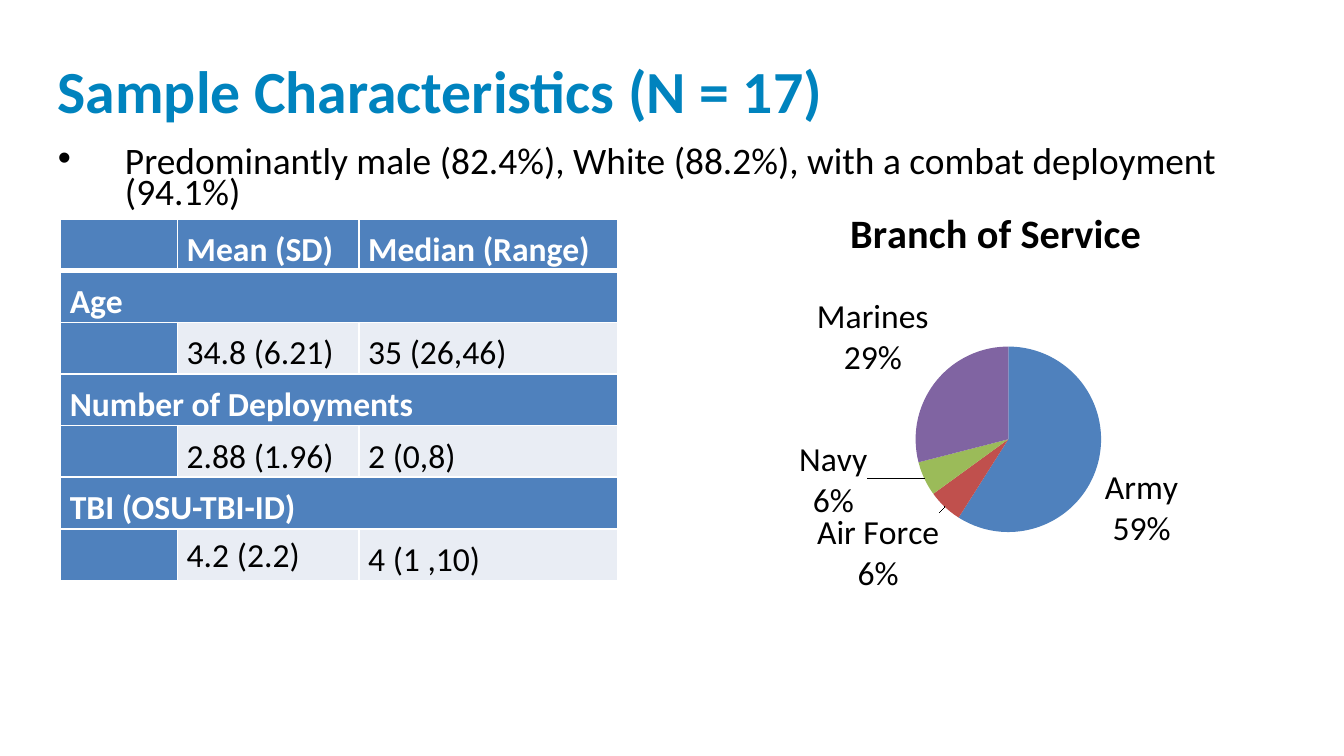
from lxml import etree
from pptx import Presentation
from pptx.chart.data import CategoryChartData
from pptx.dml.color import RGBColor
from pptx.enum.chart import XL_CHART_TYPE, XL_LABEL_POSITION
from pptx.enum.text import MSO_ANCHOR, MSO_AUTO_SIZE, PP_ALIGN
from pptx.oxml import parse_xml
from pptx.oxml.ns import nsdecls, qn
from pptx.util import Inches, Pt

FONT = "Calibri"
TEAL = RGBColor(0x00, 0x83, 0xBE)
BLACK = RGBColor(0, 0, 0)
WHITE = RGBColor(0xFF, 0xFF, 0xFF)
BLUE = RGBColor(0x4F, 0x81, 0xBD)
PALE = RGBColor(0xE9, 0xED, 0xF4)
RED = RGBColor(0xC0, 0x50, 0x4D)
GREEN = RGBColor(0x9B, 0xBB, 0x59)
PURPLE = RGBColor(0x80, 0x64, 0xA2)

ROWS = [
    ("", "Mean (SD)", "Median (Range)"),
    ("Age",),
    ("", "34.8 (6.21)", "35 (26,46)"),
    ("Number of Deployments",),
    ("", "2.88 (1.96)", "2 (0,8)"),
    ("TBI (OSU-TBI-ID)",),
    ("", "4.2 (2.2)", "4 (1 ,10)"),
]
BRANCHES = [("Army", 59, BLUE), ("Air Force", 6, RED),
            ("Navy", 6, GREEN), ("Marines", 29, PURPLE)]
# Label shift and size, as shares of the chart
LABELS = {1: (0, 0, 0.13, 0.26), 2: (-0.08, -0.09, 0.13, 0.18)}
C15 = "http://schemas.microsoft.com/office/drawing/2012/chart"


def style(font, size, color=BLACK, bold=False):
    font.name, font.size, font.bold = FONT, Pt(size), bold
    font.color.rgb = color


def write(frame, text, size=18, color=BLACK, bold=False, gap=1.0,
          anchor=MSO_ANCHOR.TOP, bullet=False):
    frame.vertical_anchor = anchor
    para = frame.paragraphs[0]
    para.text = text
    para.alignment = PP_ALIGN.LEFT
    para.line_spacing = gap
    para.space_before = Pt(0)
    if bullet:
        props = para._p.get_or_add_pPr()
        props.set("marL", str(Inches(0.5)))
        props.set("indent", str(-Inches(0.5)))
        etree.SubElement(props, qn("a:buChar")).set("char", "•")
    style(para.font, size, color, bold)
    for run in para.runs:
        style(run.font, size, color, bold)


def place(shape, left, top, width, height):
    shape.left, shape.top = Inches(left), Inches(top)
    shape.width, shape.height = Inches(width), Inches(height)
    shape.text_frame.word_wrap = True
    shape.text_frame.auto_size = MSO_AUTO_SIZE.NONE


def edge(cell, side, width):
    cell._tc.get_or_add_tcPr().append(parse_xml(
        f'<a:ln{side} {nsdecls("a")} w="{Pt(width)}"><a:solidFill>'
        f'<a:srgbClr val="{WHITE}"/></a:solidFill></a:ln{side}>'))


def fill_cell(cell, text, row, dark, anchor):
    for side in "LRTB":
        thick = (row, side) in ((0, "B"), (1, "T"))
        edge(cell, side, 3 if thick else 1)
    cell.fill.solid()
    cell.fill.fore_color.rgb = BLUE if dark else PALE
    cell.margin_left = cell.margin_right = Inches(0.07)
    cell.margin_top = cell.margin_bottom = 0
    write(cell.text_frame, text, color=WHITE if dark else BLACK,
          bold=dark, gap=1.15)
    cell.vertical_anchor = anchor


def add_stats(slide):
    widths = (0.87, 1.35, 1.93)
    table = slide.shapes.add_table(
        len(ROWS), len(widths), Inches(0.45), Inches(1.63),
        Inches(sum(widths)), Inches(2.69)).table
    for col, width in zip(table.columns, widths):
        col.width = Inches(width)
    for r, texts in enumerate(ROWS):
        group = len(texts) == 1
        for c in range(len(widths)):
            text = texts[c] if c < len(texts) else ""
            top = (r, c) == (len(ROWS) - 1, 1)
            fill_cell(table.cell(r, c), text, r, group or r == 0 or c == 0,
                      MSO_ANCHOR.TOP if top else MSO_ANCHOR.BOTTOM)
        if group:
            table.cell(r, 0).merge(table.cell(r, len(widths) - 1))


def layout(x, y, extra=""):
    return parse_xml(
        f'<c:layout {nsdecls("c")}><c:manualLayout>{extra}'
        f'<c:x val="{x}"/><c:y val="{y}"/></c:manualLayout></c:layout>')


def break_lines(labels):
    mark = etree.Element(qn("c:separator"))
    mark.text = "\n"
    last = labels.find(qn("c:showBubbleSize"))
    if last is None:
        last = labels.find(qn("c:showPercent"))
    last.addnext(mark)


def move_label(point, x, y, width, height):
    label = point.data_label
    style(label.font, 18)
    label.position = XL_LABEL_POSITION.OUTSIDE_END
    node = label._dLbl
    for flag, on in (("showVal", 0), ("showCatName", 1), ("showPercent", 1)):
        node.find(qn(f"c:{flag}")).set("val", str(on))
    node.find(qn("c:idx")).addnext(layout(x, y))
    break_lines(node)
    node.append(parse_xml(
        f'<c:extLst {nsdecls("c")}>'
        f'<c:ext uri="{{CE6537A1-D6FC-4f65-9D91-7224C49458BB}}" '
        f'xmlns:c15="{C15}"><c15:layout><c:manualLayout>'
        f'<c:w val="{width}"/><c:h val="{height}"/>'
        f'</c:manualLayout></c15:layout></c:ext></c:extLst>'))


def add_pie(slide):
    data = CategoryChartData()
    data.categories = [name for name, _, _ in BRANCHES]
    data.add_series("Series 1", [value for _, value, _ in BRANCHES])
    chart = slide.shapes.add_chart(
        XL_CHART_TYPE.PIE, Inches(5.09), Inches(1.34),
        Inches(4.64), Inches(3.54), data).chart
    style(chart.font, 18)
    chart.has_legend = False
    chart.has_title = True
    para = chart.chart_title.text_frame.paragraphs[0]
    para.text = "Branch of Service"
    style(para.runs[0].font, 21.6, bold=True)

    # Pie size and place
    area = chart._chartSpace.chart.plotArea
    for old in area.findall(qn("c:layout")):
        area.remove(old)
    frame = layout(0.37, 0.35, '<c:layoutTarget val="inner"/>'
                   '<c:xMode val="edge"/><c:yMode val="edge"/>')
    for tag, size in (("c:w", 0.3), ("c:h", 0.39)):
        etree.SubElement(frame[0], qn(tag)).set("val", str(size))
    area.insert(0, frame)

    # Labels with name and share
    series = chart.plots[0].series[0]
    labels = series.data_labels
    style(labels.font, 18)
    labels.number_format, labels.number_format_is_linked = "0%", False
    labels.show_value = False
    labels.show_category_name = labels.show_percentage = True
    labels.position = XL_LABEL_POSITION.OUTSIDE_END
    break_lines(labels._element)
    for i, (_, _, color) in enumerate(BRANCHES):
        fill = series.points[i].format.fill
        fill.solid()
        fill.fore_color.rgb = color
    for i, box in LABELS.items():
        move_label(series.points[i], *box)


def main():
    deck = Presentation()
    deck.slide_width = Inches(10)
    deck.slide_height = Inches(10 * 9 / 16)
    slide = deck.slides.add_slide(deck.slide_layouts[1])
    title, body = slide.placeholders

    # Heading and bullet
    place(title, 0.33, 0.51, 9.28, 0.42)
    write(title.text_frame, "Sample Characteristics (N = 17)", size=32,
          color=TEAL, bold=True, gap=0.8, anchor=MSO_ANCHOR.MIDDLE)
    place(body, 0.33, 1.06, 9.28, 4.1)
    write(body.text_frame, "Predominantly male (82.4%), White (88.2%), "
          "with a combat deployment (94.1%)", size=20, gap=0.7, bullet=True)

    # Table and chart
    add_stats(slide)
    add_pie(slide)
    deck.save("out.pptx")


if __name__ == "__main__":
    main()
